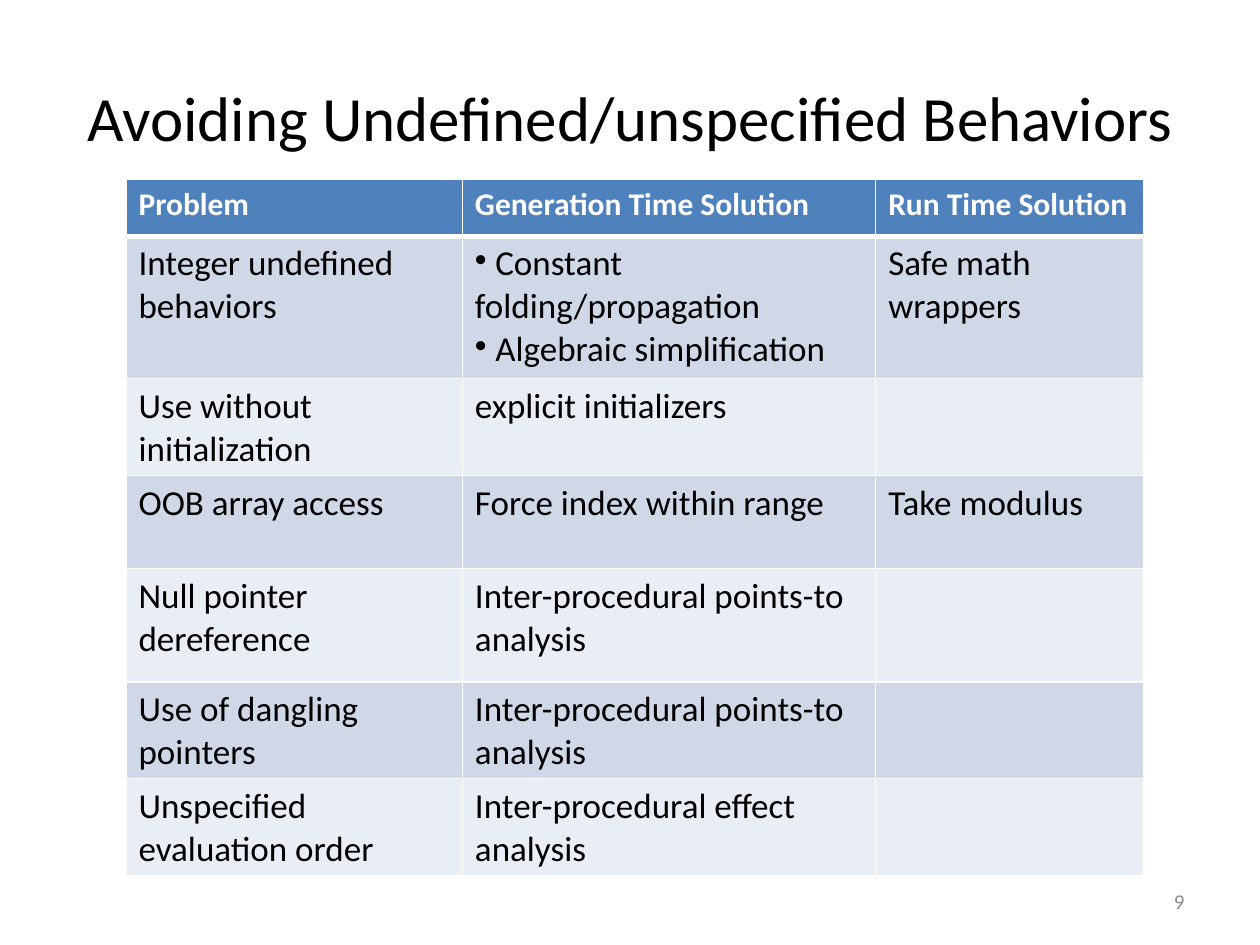
from lxml.etree import SubElement
from pptx import Presentation
from pptx.dml.color import RGBColor
from pptx.enum.text import MSO_ANCHOR, PP_ALIGN
from pptx.oxml import parse_xml
from pptx.oxml.ns import nsdecls, qn
from pptx.util import Inches, Pt

FONT = "Calibri"
COLORS = {
    "text": "000000",
    "muted": "8C8C8C",
    "white": "FFFFFF",
    "header": "4F81BD",
    "odd": "D0D8E8",
    "even": "E9EDF4",
}
BULLET = "• "

HEADER = ("Problem", "Generation Time Solution", "Run Time Solution")
ROWS = [
    ("Integer undefined behaviors",
     "• Constant folding/propagation\n• Algebraic simplification",
     "Safe math wrappers"),
    ("Use without initialization", "explicit initializers", ""),
    ("OOB array access", "Force index within range", "Take modulus"),
    ("Null pointer dereference", "Inter-procedural points-to analysis", ""),
    ("Use of dangling pointers", "Inter-procedural points-to analysis", ""),
    ("Unspecified evaluation order", "Inter-procedural effect analysis", ""),
]
COL_WIDTHS = (2.67, 3.28, 2.13)
ROW_HEIGHTS = (0.45, 1.13, 0.74, 0.74, 0.9, 0.74, 0.74)


def rgb(name):
    return RGBColor.from_string(COLORS[name])


class SlideBuilder:
    def __init__(self, prs):
        self.width, self.height = prs.slide_width, prs.slide_height
        self.slide = prs.slides.add_slide(prs.slide_layouts[5])

    def box(self, x, y, w, h):
        """Turn shares of the slide's size into lengths."""
        return (round(x * self.width), round(y * self.height),
                round(w * self.width), round(h * self.height))

    def style(self, p, size, color, bold=False, align=PP_ALIGN.LEFT):
        p.alignment = align
        p.font.name, p.font.size, p.font.bold = FONT, Pt(size), bold
        p.font.color.rgb = rgb(color)

    def title(self, text, share):
        sp = self.slide.shapes.title
        sp.left, sp.top, sp.width, sp.height = self.box(*share)
        tf = sp.text_frame
        tf.text, tf.vertical_anchor = text, MSO_ANCHOR.MIDDLE
        self.style(tf.paragraphs[0], 36, "text", align=PP_ALIGN.CENTER)

    def page_number(self, text, share):
        tf = self.slide.shapes.add_textbox(*self.box(*share)).text_frame
        tf.word_wrap, tf.vertical_anchor = True, MSO_ANCHOR.MIDDLE
        tf.text = text
        self.style(tf.paragraphs[0], 12, "muted", align=PP_ALIGN.RIGHT)

    def borders(self, cell, top, bottom):
        tc_pr = cell._tc.get_or_add_tcPr()
        sides = (("lnL", 1), ("lnR", 1), ("lnT", top), ("lnB", bottom))
        for i, (side, width) in enumerate(sides):
            tc_pr.insert(i, parse_xml(
                f'<a:{side} {nsdecls("a")} w="{Pt(width)}"><a:solidFill>'
                f'<a:srgbClr val="{COLORS["white"]}"/></a:solidFill></a:{side}>'))

    def cell(self, cell, text, row):
        is_header = row == 0
        fill = "header" if is_header else ("even", "odd")[row % 2]
        cell.fill.solid()
        cell.fill.fore_color.rgb = rgb(fill)
        self.borders(cell, 3 if row == 1 else 1, 3 if is_header else 1)
        tf = cell.text_frame
        tf.text = text.replace(BULLET, " ")
        for p, line in zip(tf.paragraphs, text.split("\n")):
            if is_header:
                self.style(p, 18, "white", bold=True)
            else:
                self.style(p, 20, "text")
            if line.startswith(BULLET):
                p_pr = p._p.get_or_add_pPr()
                bullet = SubElement(p_pr, qn("a:buChar"), char=BULLET.strip())
                p_pr.remove(bullet)
                p_pr.insert(0, bullet)

    def table(self, rows, share, col_widths, row_heights):
        table = self.slide.shapes.add_table(
            len(rows), len(col_widths), *self.box(*share)).table
        for column, width in zip(table.columns, col_widths):
            column.width = Inches(width)
        for i, (height, texts) in enumerate(zip(row_heights, rows)):
            table.rows[i].height = Inches(height)
            for j, text in enumerate(texts):
                self.cell(table.cell(i, j), text, i)


def main():
    prs = Presentation()
    prs.slide_width, prs.slide_height = Inches(10), Inches(7.5)
    s = SlideBuilder(prs)
    s.title("Avoiding Undefined/unspecified Behaviors", (0.05, 0.04, 0.9, 1 / 6))
    s.page_number("9", (0.717, 0.927, 0.233, 0.053))
    s.table([HEADER, *ROWS], (0.1, 0.19, 0.808, 0.735), COL_WIDTHS, ROW_HEIGHTS)
    prs.save("out.pptx")


if __name__ == "__main__":
    main()
